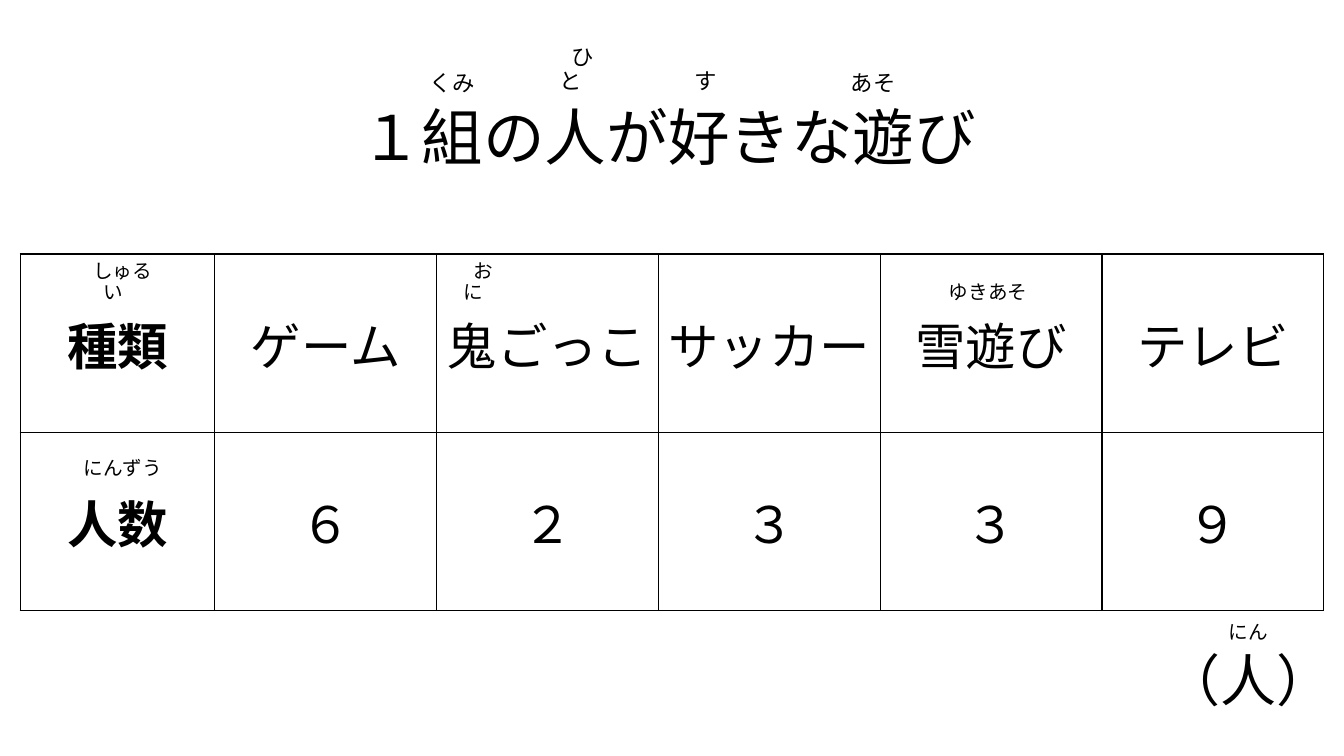
from lxml import etree
from pptx import Presentation
from pptx.dml.color import RGBColor
from pptx.enum.text import MSO_ANCHOR as Anchor, PP_ALIGN as Align
from pptx.oxml.ns import qn
from pptx.util import Inches, Pt

BLACK = RGBColor(0x00, 0x00, 0x00)
FONT = "Noto Sans CJK JP"

GAMES = [("ゲーム", "６"), ("鬼ごっこ", "２"), ("サッカー", "３"),
         ("雪遊び", "３"), ("テレビ", "９")]
HEADINGS = ("種類", "人数")

# Furigana: text, left, top, width, relative to their region
TITLE_READINGS = [("　くみ", 3.02, -0.03, 0.95), ("　ひと", 4.38, -0.05, 0.81),
                  ("　す", 5.53, -0.05, 0.95), ("　あそ", 7.09, -0.03, 1.16)]
TABLE_READINGS = [("　しゅるい", 0.39, 0.17, 1.06), ("　おに", 4.13, 0.17, 0.73),
                  ("　ゆきあそ", 8.87, 0.17, 1.27), ("　にんずう", 0.33, 1.92, 1.18)]
READING_HEIGHT = 0.37


def add_text(paragraph, text, size, bold=False):
    paragraph.alignment = Align.CENTER
    run = paragraph.add_run()
    run.text = text
    font = run.font
    font.size, font.bold, font.name = Pt(size), bold, FONT
    font.color.rgb = BLACK
    # Japanese glyphs use the East Asian typeface
    etree.SubElement(run._r.get_or_add_rPr(), qn("a:ea"), typeface=FONT)


def add_label(slide, text, size, left, top, width, height, anchor=Anchor.BOTTOM):
    box = slide.shapes.add_textbox(Inches(left), Inches(top),
                                   Inches(width), Inches(height))
    frame = box.text_frame
    frame.word_wrap = True
    frame.vertical_anchor = anchor
    paragraph = frame.paragraphs[0]
    paragraph.line_spacing = 0.9
    add_text(paragraph, text, size)


def add_readings(slide, readings, size, left, top):
    for text, dx, dy, width in readings:
        add_label(slide, text, size, left + dx, top + dy, width, READING_HEIGHT)


def set_borders(cell):
    properties = cell._tc.get_or_add_tcPr()
    for position, side in enumerate(("a:lnL", "a:lnR", "a:lnT", "a:lnB")):
        line = etree.Element(qn(side), w=str(Pt(1)))
        fill = etree.SubElement(line, qn("a:solidFill"))
        etree.SubElement(fill, qn("a:srgbClr"), val=str(BLACK))
        properties.insert(position, line)


def add_title(slide, left, top, width, height):
    add_label(slide, "１組の人が好きな遊び", 44, left, top, width, height, Anchor.MIDDLE)
    add_readings(slide, TITLE_READINGS, 16, left, top)


def add_games_table(slide, left, top, width, height):
    columns = [HEADINGS] + GAMES
    frame = slide.shapes.add_table(len(HEADINGS), len(columns), Inches(left),
                                   Inches(top), Inches(width), Inches(height))
    table = frame.table
    table.first_row = table.horz_banding = False
    game_width = 2.2
    heading_width = width - game_width * len(GAMES)
    for row in table.rows:
        row.height = Inches(height / len(HEADINGS))
    for column, texts in enumerate(columns):
        is_heading = column == 0
        table.columns[column].width = Inches(heading_width if is_heading else game_width)
        for row, text in enumerate(texts):
            cell = table.cell(row, column)
            cell.fill.background()
            cell.vertical_anchor = Anchor.MIDDLE
            cell.margin_left = cell.margin_right = Inches(0.05)
            set_borders(cell)
            add_text(cell.text_frame.paragraphs[0], text, 36, bold=is_heading)
    add_readings(slide, TABLE_READINGS, 14, left, top)


def add_unit(slide, left, top, width, height):
    add_label(slide, "（人）", 40, left, top + 0.3, width, height - 0.3, Anchor.MIDDLE)
    add_label(slide, "にん", 14, left + 0.34, top, 1.38, 0.69)


def main():
    presentation = Presentation()
    presentation.slide_width = Inches(13.33)
    presentation.slide_height = Inches(7.5)
    slide = presentation.slides.add_slide(presentation.slide_layouts[6])
    add_title(slide, 0.88, 0.67, 11.5, 1.45)
    add_games_table(slide, 0.2, 2.52, 12.93, 3.54)
    add_unit(slide, 11.35, 5.75, 2.07, 1.75)
    presentation.save("out.pptx")


if __name__ == "__main__":
    main()
